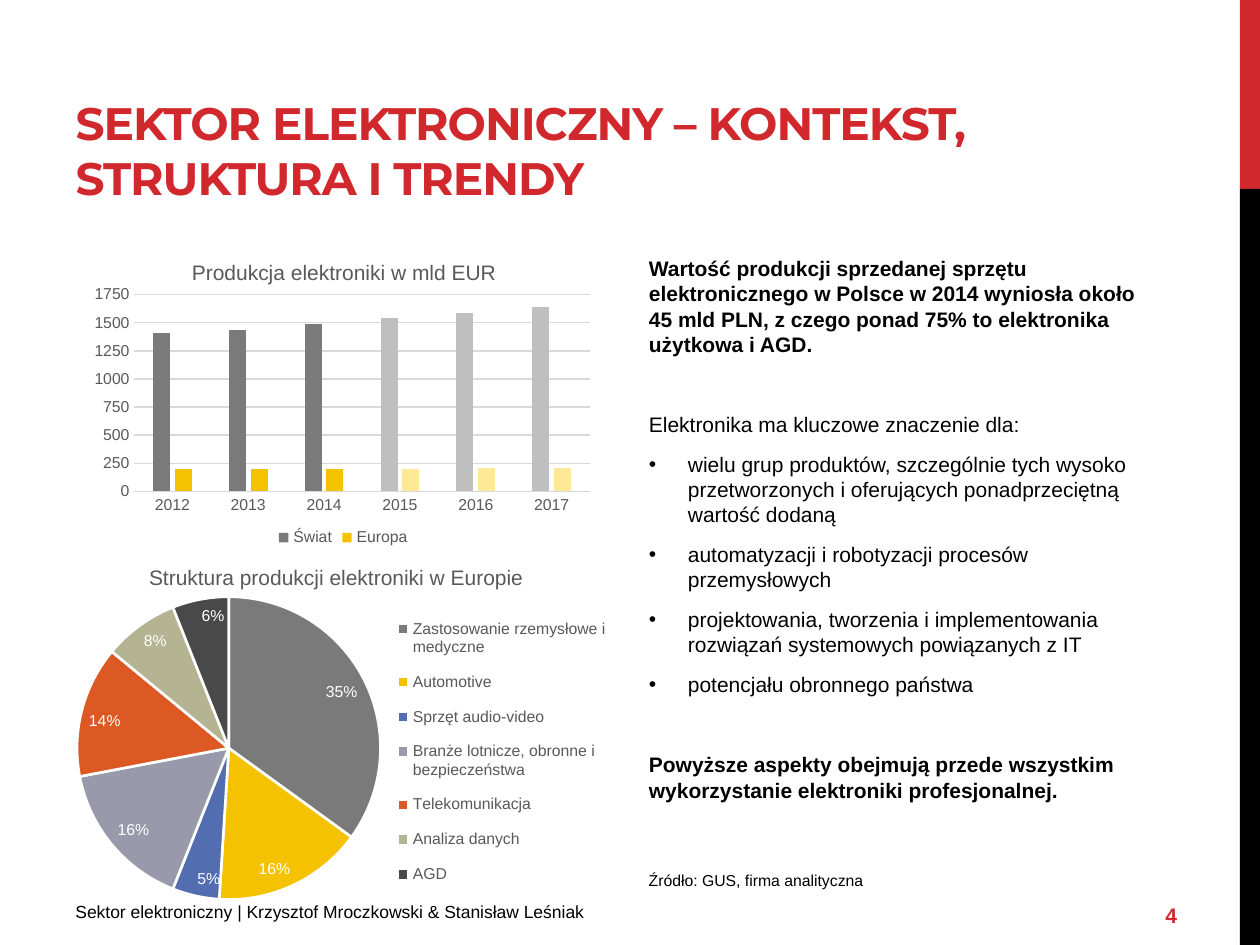
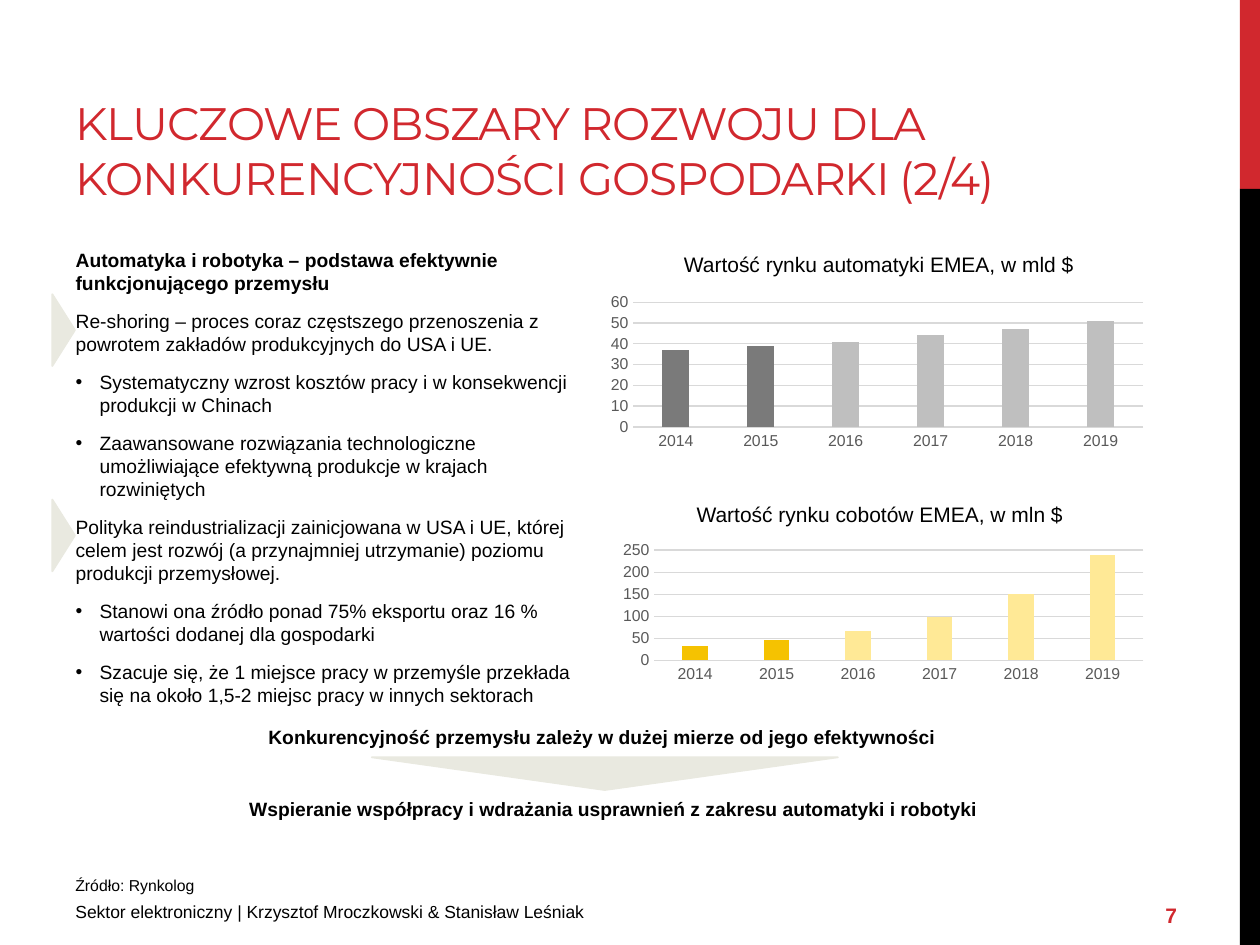
from lxml import etree
from pptx import Presentation
from pptx import util as u
from pptx.chart.data import CategoryChartData
from pptx.dml.color import RGBColor
from pptx.enum import chart as charts
from pptx.enum import shapes, text
from pptx.oxml import parse_xml
from pptx.oxml.ns import nsdecls, qn

RED, BLACK, WHITE = "D1282E", "000000", "FFFFFF"
GREY, LIGHT_GREY, YELLOW, LIGHT_YELLOW = "7A7A7A", "BFBFBF", "F5C201", "FFE996"
LABEL, RULE, BEIGE = "595959", "D9D9D9", "E9E9E0"
PIE_COLOURS = [GREY, YELLOW, "526DB0", "989AAC", "DC5924", "B4B392", "494949"]
FOOTER = "Sektor elektroniczny | Krzysztof Mroczkowski & Stanisław Leśniak"
COLUMN, PIE = charts.XL_CHART_TYPE.COLUMN_CLUSTERED, charts.XL_CHART_TYPE.PIE
LEFT, CENTER = text.PP_ALIGN.LEFT, text.PP_ALIGN.CENTER
colour = RGBColor.from_string


def px(*lengths):
    """Turn px (100 to the inch) into EMU."""
    return [u.Emu(length * 9144) for length in lengths]


def style_font(font, size, hex_colour=BLACK, bold=False, name="Arial"):
    font.name, font.size, font.bold = name, u.Pt(size), bold
    font.color.rgb = colour(hex_colour)


# Body paragraphs: (kind, text); "apart" stands clear of what precedes it.
# Texts: (box, text, size, colour, bold, alignment).
# Series: (name, values, colour, forecast colour), forecasts start at "forecast".
SLIDES = [
    {
        "title": "SEKTOR ELEKTRONICZNY – KONTEKST, STRUKTURA I TRENDY",
        "title_bold": True,
        "number": "4",
        "body_box": (505, 198, 411, 478),
        "body_size": 12,
        "indent": 31,
        "body": [
            ("bold", "Wartość produkcji sprzedanej sprzętu elektronicznego w Polsce w 2014 "
                     "wyniosła około 45 mld PLN, z czego ponad 75% to elektronika użytkowa i AGD."),
            ("apart", "Elektronika ma kluczowe znaczenie dla:"),
            ("bullet", "wielu grup produktów, szczególnie tych wysoko przetworzonych "
                       "i oferujących ponadprzeciętną wartość dodaną"),
            ("bullet", "automatyzacji i robotyzacji procesów przemysłowych"),
            ("bullet", "projektowania, tworzenia i implementowania rozwiązań systemowych "
                       "powiązanych z IT"),
            ("bullet", "potencjału obronnego państwa"),
            ("bold apart", "Powyższe aspekty obejmują przede wszystkim wykorzystanie "
                           "elektroniki profesjonalnej."),
        ],
        "texts": [((505, 686, 411, 25), "Źródło: GUS, firma analityczna", 9, BLACK, False, LEFT)],
        "triangles": [],
        "charts": [
            {
                "type": COLUMN,
                "box": (60, 198, 425, 240),
                "title": "Produkcja elektroniki w mld EUR",
                "categories": ["2012", "2013", "2014", "2015", "2016", "2017"],
                "series": [
                    ("Świat", [1410, 1440, 1490, 1540, 1590, 1640], GREY, LIGHT_GREY),
                    ("Europa", [200, 200, 200, 200, 210, 210], YELLOW, LIGHT_YELLOW),
                ],
                "forecast": 3,
                "maximum": 1750,
                "step": 250,
                "legend": charts.XL_LEGEND_POSITION.BOTTOM,
                "layouts": {"title": (0.21, 0.02), "plotArea": (0.11, 0.15, 0.85, 0.65)},
            },
            {
                "type": PIE,
                "box": (48, 434, 438, 281),
                "title": "Struktura produkcji elektroniki w Europie",
                "categories": [
                    "Zastosowanie rzemysłowe i medyczne", "Automotive", "Sprzęt audio-video",
                    "Branże lotnicze, obronne i bezpieczeństwa", "Telekomunikacja",
                    "Analiza danych", "AGD",
                ],
                "series": [("Udział", [35, 16, 5, 16, 14, 8, 6], GREY, GREY)],
                "legend": charts.XL_LEGEND_POSITION.RIGHT,
                "layouts": {"plotArea": (0.03, 0.14, 0.55, 0.86),
                            "legend": (0.6, 0.16, 0.4, 0.84)},
            },
        ],
    },
    {
        "title": "KLUCZOWE OBSZARY ROZWOJU DLA KONKURENCYJNOŚCI GOSPODARKI (2/4)",
        "title_bold": False,
        "number": "7",
        "body_box": (50, 192, 426, 478),
        "body_size": 11,
        "indent": 19,
        "body": [
            ("bold", "Automatyka i robotyka – podstawa efektywnie funkcjonującego przemysłu"),
            ("plain", "Re-shoring – proces coraz częstszego przenoszenia z powrotem zakładów "
                      "produkcyjnych do USA i UE."),
            ("bullet", "Systematyczny wzrost kosztów pracy i w konsekwencji produkcji w Chinach"),
            ("bullet", "Zaawansowane rozwiązania technologiczne umożliwiające efektywną "
                       "produkcje w krajach rozwiniętych"),
            ("plain", "Polityka reindustrializacji zainicjowana w USA i UE, której celem jest "
                      "rozwój (a przynajmniej utrzymanie) poziomu produkcji przemysłowej."),
            ("bullet", "Stanowi ona źródło ponad 75% eksportu oraz 16 % wartości dodanej "
                       "dla gospodarki"),
            ("bullet", "Szacuje się, że 1 miejsce pracy w przemyśle przekłada się na około "
                       "1,5-2 miejsc pracy w innych sektorach"),
        ],
        "texts": [
            ((50, 690, 411, 25), "Źródło: Rynkolog", 9, BLACK, False, LEFT),
            ((50, 571, 856, 29),
             "Konkurencyjność przemysłu zależy w dużej mierze od jego efektywności",
             11, BLACK, True, CENTER),
            ((59, 628, 856, 29),
             "Wspieranie współpracy i wdrażania usprawnień z zakresu automatyki i robotyki",
             11, BLACK, True, CENTER),
            ((533, 195, 336, 30), "Wartość rynku automatyki EMEA, w mld $", 12, BLACK, False, LEFT),
            ((543, 393, 315, 30), "Wartość rynku cobotów EMEA, w mln $", 12, BLACK, False, LEFT),
        ],
        "triangles": [((295, 601, 370, 26), 180), ((22, 416, 57, 18), 90), ((22, 253, 57, 18), 90)],
        "charts": [
            {
                "type": COLUMN,
                "box": box,
                "categories": ["2014", "2015", "2016", "2017", "2018", "2019"],
                "series": [series],
                "forecast": 2,
                "step": step,
            }
            for box, series, step in [
                ((476, 230, 440, 130),
                 ("Automatyka", [37, 39, 41, 44, 47, 51], GREY, LIGHT_GREY), 10),
                ((486, 427, 430, 118),
                 ("Coboty", [32, 45, 67, 98, 151, 238], YELLOW, LIGHT_YELLOW), 50),
            ]
        ],
    },
]

presentation = Presentation()
presentation.slide_width, presentation.slide_height = px(1000, 750)

for content in SLIDES:
    slide = presentation.slides.add_slide(presentation.slide_layouts[1])

    for box, fill in [((984, 0, 16, 150), RED), ((984, 150, 16, 600), BLACK)]:
        band = slide.shapes.add_shape(shapes.MSO_SHAPE.RECTANGLE, *px(*box))
        band.shadow.inherit = False
        band.fill.solid()
        band.fill.fore_color.rgb = colour(fill)
        band.line.fill.background()

    title, body = slide.placeholders
    title.left, title.top, title.width, title.height = px(50, 17, 899, 150)
    body.left, body.top, body.width, body.height = px(*content["body_box"])
    for placeholder in (title, body):
        placeholder.text_frame.auto_size = text.MSO_AUTO_SIZE.NONE
    title.text_frame.vertical_anchor = text.MSO_ANCHOR.BOTTOM
    paragraph = title.text_frame.paragraphs[0]
    paragraph.alignment = LEFT
    run = paragraph.add_run()
    run.text = content["title"]
    style_font(run.font, 26, RED, content["title_bold"], "Montserrat")
    run.font._element.set("spc", "-60")

    for index, (kind, words) in enumerate(content["body"]):
        frame = body.text_frame
        paragraph = frame.add_paragraph() if index else frame.paragraphs[0]
        paragraph.space_before = u.Pt(25.3 if "apart" in kind else 2.4)
        paragraph.space_after = u.Pt(6)
        properties = paragraph._p.get_or_add_pPr()
        indent = px(content["indent"])[0] if kind == "bullet" else 0
        properties.set("marL", str(indent))
        properties.set("indent", str(-indent))
        if kind == "bullet":
            etree.SubElement(properties, qn("a:buChar")).set("char", "•")
        else:
            etree.SubElement(properties, qn("a:buNone"))
        run = paragraph.add_run()
        run.text = words
        style_font(run.font, content["body_size"], bold="bold" in kind)

    footers = [
        ((50, 710, 489, 31), FOOTER, 10, BLACK, False, LEFT),
        ((915, 711, 144, 29), content["number"], 12, RED, True, LEFT),
    ]
    for box, words, size, hex_colour, bold, alignment in footers + content["texts"]:
        frame = slide.shapes.add_textbox(*px(*box)).text_frame
        frame.word_wrap = True
        paragraph = frame.paragraphs[0]
        paragraph.alignment = alignment
        run = paragraph.add_run()
        run.text = words
        style_font(run.font, size, hex_colour, bold)

    for box, rotation in content["triangles"]:
        triangle = slide.shapes.add_shape(shapes.MSO_SHAPE.ISOSCELES_TRIANGLE, *px(*box))
        triangle.rotation = rotation
        triangle.shadow.inherit = False
        triangle.fill.solid()
        triangle.fill.fore_color.rgb = colour(BEIGE)
        triangle.line.color.rgb = colour(BEIGE)
        triangle.line.width = u.Pt(1)

    for details in content["charts"]:
        data = CategoryChartData()
        data.categories = details["categories"]
        for name, values, *_ in details["series"]:
            data.add_series(name, values)
        chart = slide.shapes.add_chart(details["type"], *px(*details["box"]), data).chart
        style_font(chart.font, 10)
        plot = chart.plots[0]
        plot.vary_by_categories = details["type"] == PIE

        chart.has_title = "title" in details
        if chart.has_title:
            run = chart.chart_title.text_frame.paragraphs[0].add_run()
            run.text = details["title"]
            style_font(run.font, 12, LABEL)
        chart.has_legend = "legend" in details
        if chart.has_legend:
            chart.legend.position = details["legend"]
            chart.legend.include_in_layout = False
            style_font(chart.legend.font, 9, LABEL)

        if details["type"] == PIE:
            for index, fill in enumerate(PIE_COLOURS):
                slice_format = plot.series[0].points[index].format
                slice_format.fill.solid()
                slice_format.fill.fore_color.rgb = colour(fill)
                slice_format.line.color.rgb = colour(WHITE)
                slice_format.line.width = u.Pt(1.5)
            plot.has_data_labels = True
            labels = plot.data_labels
            labels.show_percentage, labels.show_value = True, False
            labels.number_format, labels.number_format_is_linked = "0%", False
            labels.position = charts.XL_LABEL_POSITION.INSIDE_END
            style_font(labels.font, 9, WHITE)
        else:
            plot.gap_width, plot.overlap = 219, -27
            for series, (_, values, actual, forecast) in zip(plot.series, details["series"]):
                series.format.fill.solid()
                series.format.fill.fore_color.rgb = colour(actual)
                for index in range(details["forecast"], len(values)):
                    fill = series.points[index].format.fill
                    fill.solid()
                    fill.fore_color.rgb = colour(forecast)
            for axis in (chart.category_axis, chart.value_axis):
                axis.major_tick_mark = axis.minor_tick_mark = charts.XL_TICK_MARK.NONE
                style_font(axis.tick_labels.font, 9, LABEL)
            chart.value_axis.format.line.fill.background()
            chart.value_axis.minimum_scale = 0
            chart.value_axis.maximum_scale = details.get("maximum")
            chart.value_axis.major_unit = details["step"]
            for rule in (chart.category_axis, chart.value_axis.major_gridlines):
                rule.format.line.color.rgb = colour(RULE)
                rule.format.line.width = u.Pt(0.75)

        for part, place in details.get("layouts", {}).items():
            element = chart.element.xpath(f"c:chart/c:{part}")[0]
            for old_layout in element.findall(qn("c:layout")):
                element.remove(old_layout)
            target = '<c:layoutTarget val="inner"/>' if part == "plotArea" else ""
            numbers = "".join(f'<c:{key} val="{value}"/>' for key, value in zip("xywh", place))
            layout = parse_xml(
                f'<c:layout {nsdecls("c")}><c:manualLayout>{target}<c:xMode val="edge"/>'
                f'<c:yMode val="edge"/>{numbers}</c:manualLayout></c:layout>')
            element.insert(0 if part == "plotArea" else 1, layout)

presentation.save("out.pptx")
